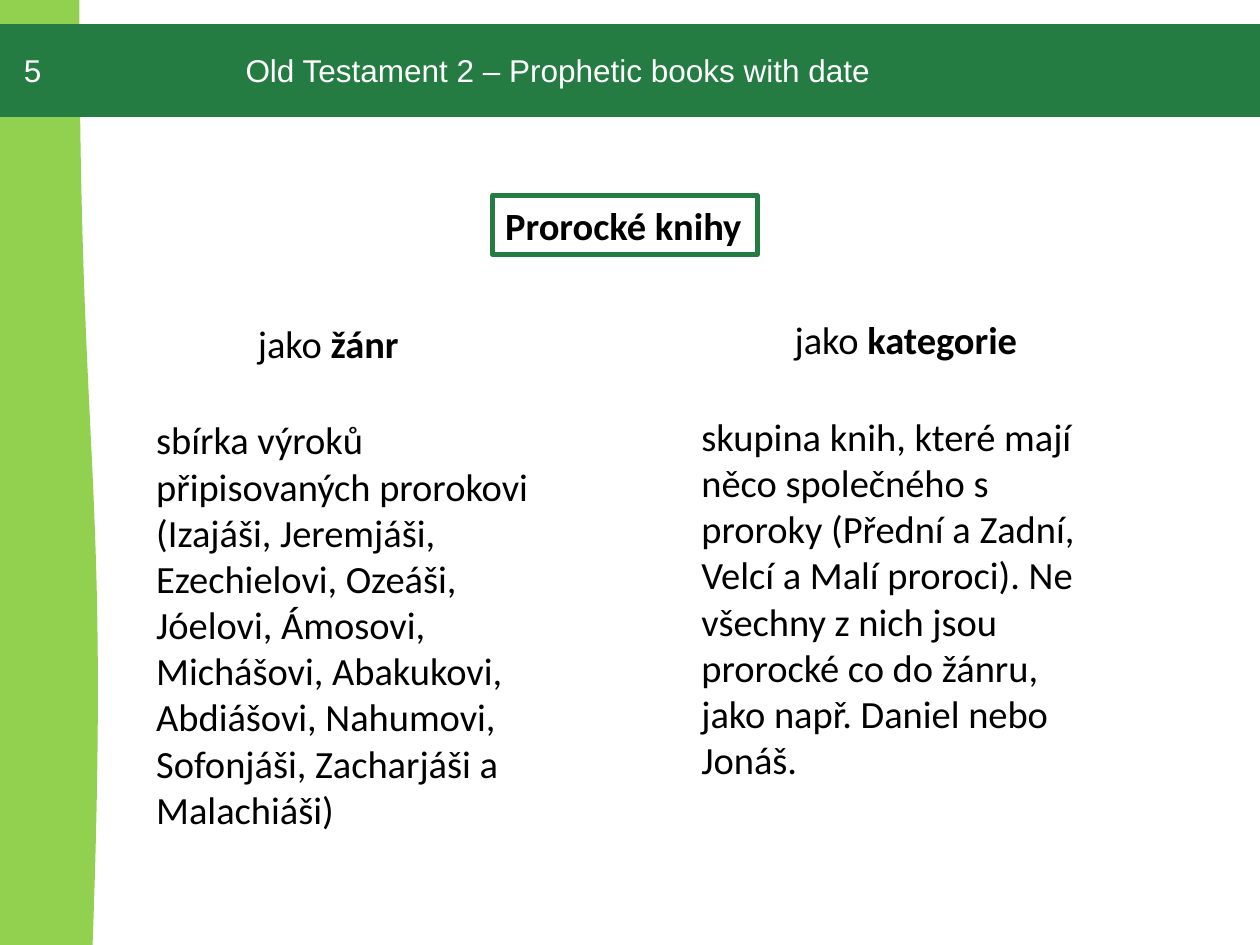
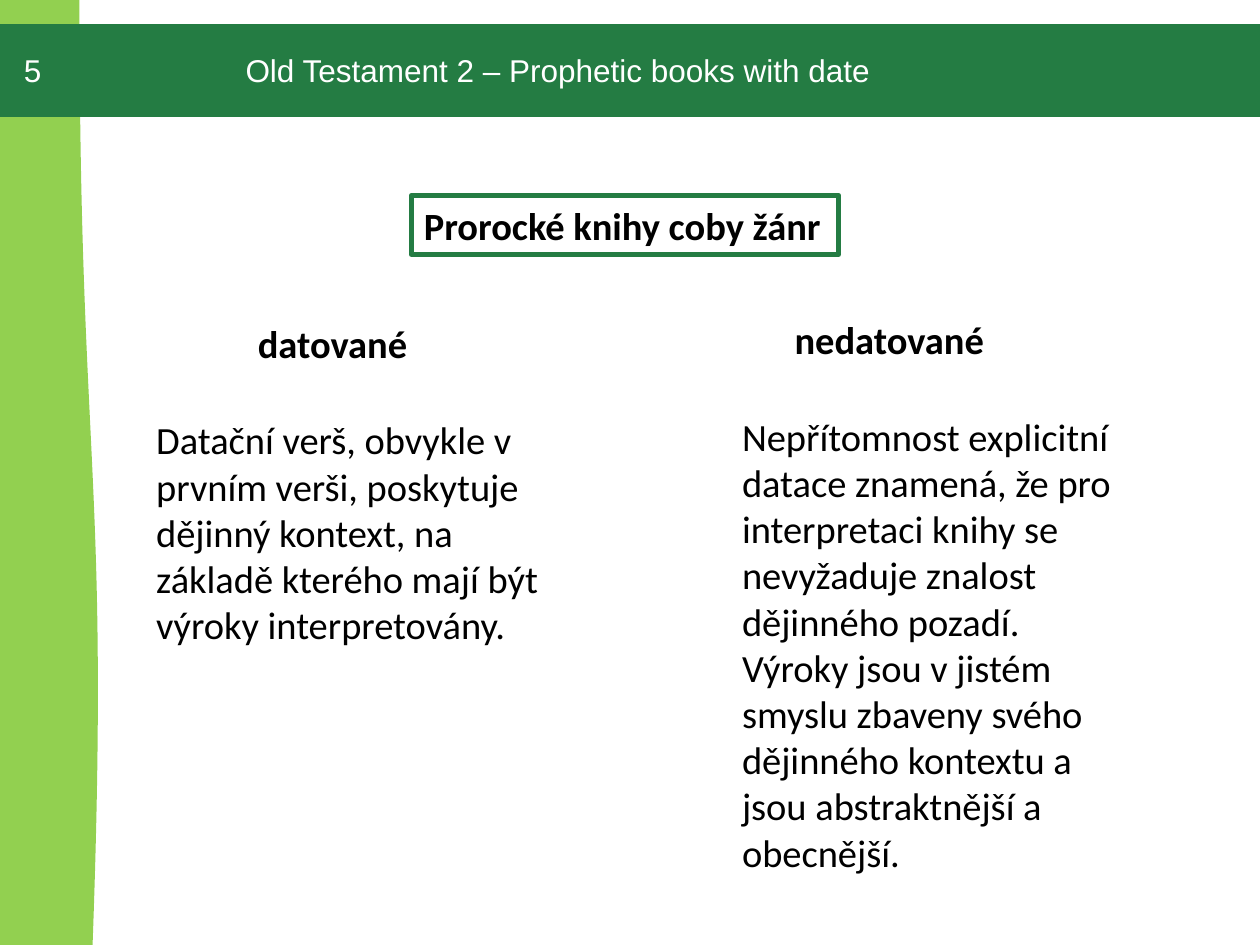
import pptx
import pptx.dml.color
import pptx.enum.shapes
import pptx.enum.text
import pptx.util

Cm = pptx.util.Cm
Pt = pptx.util.Pt
SHAPES = pptx.enum.shapes.MSO_SHAPE

GREEN = "247C43"
LIGHT_GREEN = "92D050"
BLACK = "000000"
WHITE = "FFFFFF"

PAGE_WIDTH, PAGE_HEIGHT = 25.4, 19.05
TITLE_CENTRE = 12.6
LINE_HEIGHT = 0.94


def colour(code):
    return pptx.dml.color.RGBColor.from_string(code)


def write(box, spans, font="Calibri", size=22, ink=BLACK, wrap=False):
    """Fill a box with one paragraph of (text, bold) spans."""
    frame = box.text_frame
    frame.word_wrap = wrap
    frame.auto_size = pptx.enum.text.MSO_AUTO_SIZE.SHAPE_TO_FIT_TEXT
    frame.vertical_anchor = pptx.enum.text.MSO_ANCHOR.TOP
    para = frame.paragraphs[0]
    para.alignment = pptx.enum.text.PP_ALIGN.LEFT
    for text, bold in spans:
        span = para.add_run()
        span.text = text
        span.font.name = font
        span.font.size = Pt(size)
        span.font.bold = bold
        span.font.color.rgb = colour(ink)


class Builder:
    """Holds the deck style and the page being drawn."""

    def __init__(self, deck):
        self.deck = deck
        self.page = None

    def shape(self, kind, left, top, width, height, fill=None, line=None, weight=2):
        item = self.page.shapes.add_shape(kind, Cm(left), Cm(top), Cm(width), Cm(height))
        item.shadow.inherit = False
        if fill:
            item.fill.solid()
            item.fill.fore_color.rgb = colour(fill)
        else:
            item.fill.background()
        if line:
            item.line.color.rgb = colour(line)
            item.line.width = Pt(weight)
        else:
            item.line.fill.background()
        return item

    def text(self, left, top, width, height, spans, **style):
        box = self.page.shapes.add_textbox(Cm(left), Cm(top), Cm(width), Cm(height))
        write(box, spans, **style)

    def start_page(self):
        """Add a page with the side wave, the header band and its texts."""
        self.page = self.deck.slides.add_slide(self.deck.slide_layouts[6])

        # Side wave: a document shape turned to stand on the left edge
        thickness = 2
        wave = self.shape(SHAPES.FLOWCHART_DOCUMENT, (thickness - PAGE_HEIGHT) / 2,
                          (PAGE_HEIGHT - thickness) / 2, PAGE_HEIGHT, thickness,
                          fill=LIGHT_GREEN)
        wave.rotation = 270

        # Header band
        self.shape(SHAPES.RECTANGLE, -0.71, 0.53, 28, 1.8, fill=GREEN, line=GREEN)
        header_style = {"font": "Arial", "size": 18, "ink": WHITE}
        header = self.shape(SHAPES.RECTANGLE, 4.7, 0.91, PAGE_WIDTH - 4.7, 1.02, fill=GREEN)
        write(header, [("Old Testament 2 – Prophetic books with date", False)],
              wrap=True, **header_style)
        self.text(0.23, 0.91, 0.79, 1.02, [("5", False)], **header_style)

    def title(self, text, width):
        frame = self.shape(SHAPES.RECTANGLE, TITLE_CENTRE - width / 2, 3.94, width, 1.19,
                           line=GREEN, weight=3)
        write(frame, [(text, True)])

    def column(self, top, heading_left, heading_width, heading, body_left, lines, body):
        self.text(heading_left, top, heading_width, 1.19, heading)
        self.text(body_left, top + 1.95, 8.41, lines * LINE_HEIGHT + 0.25,
                  [(body, False)], wrap=True)


def main():
    deck = pptx.Presentation()
    deck.slide_width = Cm(PAGE_WIDTH)
    deck.slide_height = Cm(PAGE_HEIGHT)
    builder = Builder(deck)

    # Left and right column: top and left edge of the heading
    left_heading = (6.32, 4.95)
    right_heading = (6.25, 15.77)

    # Prophetic books as genre and as category
    builder.start_page()
    builder.title("Prorocké knihy", 5.33)
    builder.column(
        *left_heading, 3.38, [("jako ", False), ("žánr", True)], 2.9, 9,
        "sbírka výroků připisovaných prorokovi (Izajáši, Jeremjáši, Ezechielovi, "
        "Ozeáši, Jóelovi, Ámosovi, Michášovi, Abakukovi, Abdiášovi, Nahumovi, "
        "Sofonjáši, Zacharjáši a Malachiáši)")
    builder.column(
        *right_heading, 5.05, [("jako ", False), ("kategorie", True)], 13.89, 8,
        "skupina knih, které mají něco společného s proroky (Přední a Zadní, Velcí "
        "a Malí proroci). Ne všechny z nich jsou prorocké co do žánru, jako např. "
        "Daniel nebo Jonáš.")

    # Dated and undated books
    builder.start_page()
    builder.title("Prorocké knihy coby žánr", 8.61)
    builder.column(
        *left_heading, 3.56, [("datované", True)], 2.9, 5,
        "Datační verš, obvykle v prvním verši, poskytuje dějinný kontext, na základě "
        "kterého mají být výroky interpretovány.")
    builder.column(
        *right_heading, 4.37, [("nedatované", True)], 14.71, 10,
        "Nepřítomnost explicitní datace znamená, že pro interpretaci knihy se "
        "nevyžaduje znalost dějinného pozadí. Výroky jsou v jistém smyslu zbaveny "
        "svého dějinného kontextu a jsou abstraktnější a obecnější.")

    deck.save("out.pptx")


if __name__ == "__main__":
    main()
